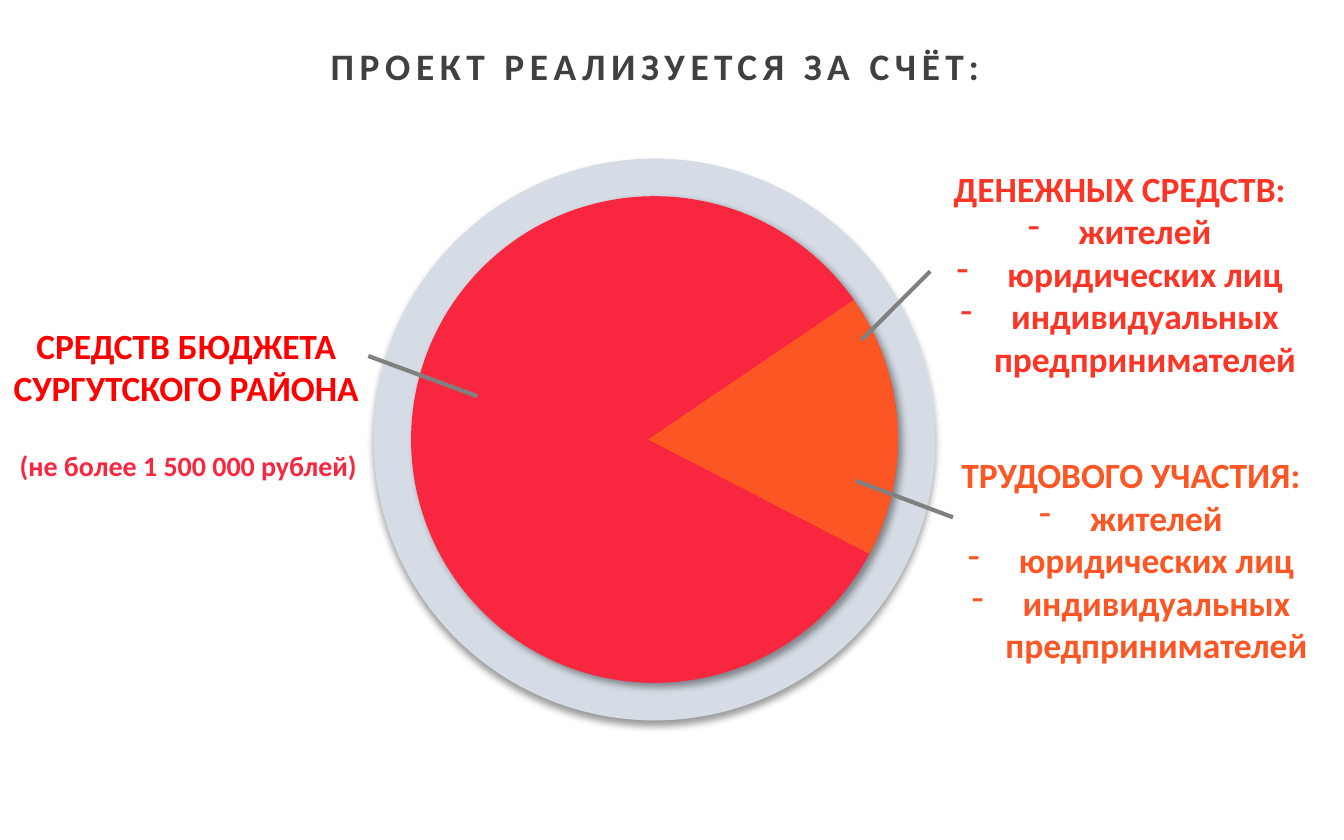
import math
from dataclasses import dataclass

import pptx
import pptx.util
from lxml import etree
from pptx.dml.color import RGBColor
from pptx.enum.shapes import MSO_CONNECTOR, MSO_SHAPE
from pptx.enum.text import MSO_ANCHOR, MSO_AUTO_SIZE, PP_ALIGN
from pptx.oxml.ns import qn
from pptx.util import Cm, Pt


@dataclass(frozen=True)
class Theme:
    font: str = "Calibri"
    title: str = "404040"
    ring: str = "D6DCE5"
    budget: str = "F92640"
    budget_label: str = "FF0000"
    money: str = "FC3526"
    labour: str = "FD5625"
    leader: str = "808080"
    title_size: float = 20
    label_size: float = 19
    note_size: float = 15


THEME = Theme()
CENTER = (12.37, 8.31)
RING_RADIUS, DISC_RADIUS = 5.31, 4.6
SECTOR_APEX = (12.25, 8.31)
SECTOR_ANGLES = (-35, 28)
CONTRIBUTORS = ["жителей", "юридических лиц", "индивидуальных предпринимателей"]


def rgb(color):
    return RGBColor.from_string(color)


def fill_plain(sp, color):
    sp.shadow.inherit = False
    sp.fill.solid()
    sp.fill.fore_color.rgb = rgb(color)
    sp.line.fill.background()


def add_shadow(sp, angle):
    effects = sp._element.spPr.find(qn("a:effectLst"))
    shadow = etree.SubElement(
        effects, qn("a:outerShdw"), blurRad=str(Pt(4)), dist=str(Pt(3)),
        dir=str(angle * 60000), algn="ctr", rotWithShape="0")
    color = etree.SubElement(shadow, qn("a:srgbClr"), val="000000")
    etree.SubElement(color, qn("a:alpha"), val="40000")


def add_disc(s, radius, color, shadow_angle):
    x, y = CENTER
    sp = s.shapes.add_shape(MSO_SHAPE.OVAL, Cm(x - radius), Cm(y - radius),
                            Cm(2 * radius), Cm(2 * radius))
    fill_plain(sp, color)
    add_shadow(sp, shadow_angle)


def add_sector(s, color):
    """Draw the slice from its apex to the edge of the disc."""
    start, end = SECTOR_ANGLES
    arc = []
    for degrees in range(start, end + 1):
        a = math.radians(degrees)
        arc.append((Cm(CENTER[0] + DISC_RADIUS * math.cos(a)),
                    Cm(CENTER[1] + DISC_RADIUS * math.sin(a))))
    builder = s.shapes.build_freeform(*map(Cm, SECTOR_APEX))
    builder.add_line_segments(arc, close=True)
    fill_plain(builder.convert_to_shape(), color)


def add_leader(s, start, end):
    line = s.shapes.add_connector(MSO_CONNECTOR.STRAIGHT, *map(Cm, start + end))
    line.line.color.rgb = rgb(THEME.leader)
    line.line.width = Pt(2.25)
    etree.SubElement(line._element.spPr, qn("a:effectLst"))


def prepare_frame(tf):
    tf.word_wrap = True
    tf.auto_size = MSO_AUTO_SIZE.NONE
    tf.vertical_anchor = MSO_ANCHOR.MIDDLE
    tf.margin_left = tf.margin_right = tf.margin_top = tf.margin_bottom = 0


def format_paragraph(p, size, color):
    p.alignment = PP_ALIGN.CENTER
    p.font.name = THEME.font
    p.font.size = Pt(size)
    p.font.bold = True
    p.font.color.rgb = rgb(color)


def add_dash(p):
    pPr = p._p.get_or_add_pPr()
    pPr.set("marL", str(Cm(0.96)))
    pPr.set("indent", str(-Cm(0.96)))
    bullet = etree.Element(qn("a:buChar"), char="-")
    pPr.insert(0, bullet)


def add_label(s, box, text, size, color, items=()):
    """Add a centred label, with dashed items below it if there are any."""
    tf = s.shapes.add_textbox(*map(Cm, box)).text_frame
    prepare_frame(tf)
    tf.text = "\n".join([text, *items])
    for i, p in enumerate(tf.paragraphs):
        format_paragraph(p, size, color)
        if i:
            add_dash(p)


def set_title(s, text):
    title = s.shapes.title
    title.left, title.top, title.width, title.height = map(Cm, (1.19, 0.36, 22.38, 1.75))
    tf = title.text_frame
    prepare_frame(tf)
    tf.text = text
    p = tf.paragraphs[0]
    format_paragraph(p, THEME.title_size, THEME.title)
    p.runs[0].font._element.set("spc", "300")


def main():
    prs = pptx.Presentation()
    prs.slide_width, prs.slide_height = Cm(25.4), Cm(15.88)
    s = prs.slides.add_slide(prs.slide_layouts[5])

    set_title(s, "ПРОЕКТ РЕАЛИЗУЕТСЯ ЗА СЧЁТ:")
    add_disc(s, RING_RADIUS, THEME.ring, 90)
    add_disc(s, DISC_RADIUS, THEME.budget, 45)
    add_sector(s, THEME.labour)

    add_label(s, (0, 6.05, 7.04, 1.75), "СРЕДСТВ БЮДЖЕТА СУРГУТСКОГО РАЙОНА",
              THEME.label_size, THEME.budget_label)
    add_label(s, (0, 7.92, 7.12, 1.75), "(не более 1 500 000 рублей)",
              THEME.note_size, THEME.budget)
    add_label(s, (17.3, 3.18, 7.72, 3.96), "ДЕНЕЖНЫХ СРЕДСТВ:",
              THEME.label_size, THEME.money, CONTRIBUTORS)
    add_label(s, (17.5, 8.6, 7.75, 3.96), "ТРУДОВОГО УЧАСТИЯ:",
              THEME.label_size, THEME.labour, CONTRIBUTORS)

    add_leader(s, (17.58, 5.13), (16.28, 6.43))
    add_leader(s, (18.01, 9.78), (16.18, 9.09))
    add_leader(s, (9.02, 7.49), (6.96, 6.73))
    prs.save("out.pptx")


if __name__ == "__main__":
    main()
